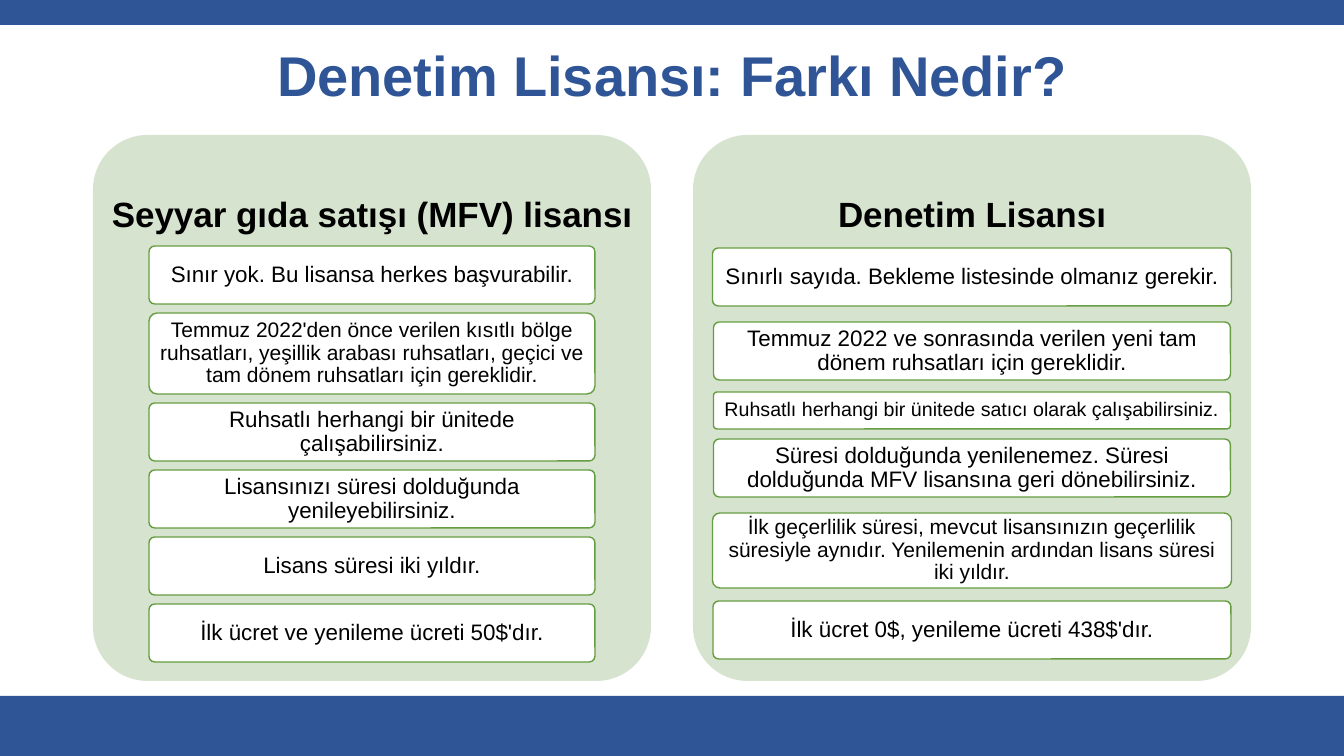
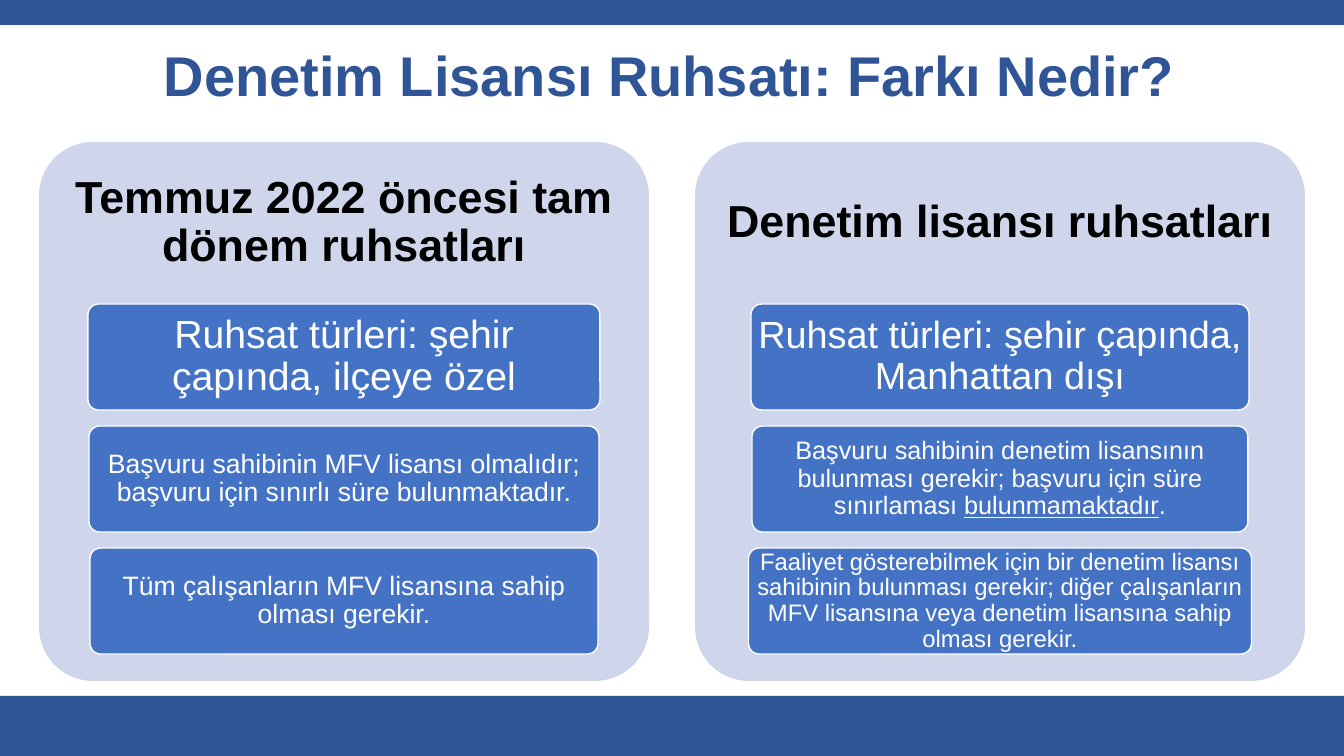
from collections import namedtuple

from pptx import Presentation
from pptx.dml.color import RGBColor
from pptx.enum.shapes import MSO_SHAPE
from pptx.enum.text import MSO_ANCHOR, PP_ALIGN
from pptx.util import Emu, Pt

WIDTH, HEIGHT = 1344, 756
SCALE = 12192000 / WIDTH
FONT = "Arial"
BLUE, BLACK, WHITE = "2F5597", "000000", "FFFFFF"
ROUND = 0.1
HEAD = 162

Box = namedtuple("Box", "x y w h")
Style = namedtuple("Style", "panel fill line ink head pad")
# gap is the space above the card
Card = namedtuple("Card", "text size width height gap")

GREEN = Style("D5E3CF", WHITE, "669D40", BLACK, 25, 6)
NAVY = Style("CFD5EA", "4472C4", WHITE, WHITE, 32, 4)


def px(n):
    return Emu(round(n * SCALE))


def rgb(code):
    return RGBColor.from_string(code)


def place(box):
    return [px(n) for n in box]


def write(shape, text, size, ink, bold=False, pad=10):
    """Set centred text; words between underscores are underlined."""
    frame = shape.text_frame
    frame.word_wrap = True
    frame.vertical_anchor = MSO_ANCHOR.MIDDLE
    frame.margin_left = frame.margin_right = px(pad)
    frame.margin_top = frame.margin_bottom = px(4)
    para = frame.paragraphs[0]
    para.alignment = PP_ALIGN.CENTER
    para.line_spacing = 0.9
    for i, part in enumerate(text.split("_")):
        run = para.add_run()
        run.text = part
        font = run.font
        font.name, font.size, font.bold = FONT, Pt(size), bold
        font.color.rgb = rgb(ink)
        if i % 2:
            font.underline = True


def block(slide, kind, box, fill, line=None):
    shape = slide.shapes.add_shape(kind, *place(box))
    shape.shadow.inherit = False
    shape.fill.solid()
    shape.fill.fore_color.rgb = rgb(fill)
    if line:
        shape.line.color.rgb = rgb(line)
        shape.line.width = Pt(1)
    else:
        shape.line.fill.background()
    if kind == MSO_SHAPE.ROUNDED_RECTANGLE:
        shape.adjustments[0] = ROUND
    return shape


def label(slide, box, *args, **opts):
    write(slide.shapes.add_textbox(*place(box)), *args, **opts)


def frame(deck, title, left, width):
    """Add a slide with its two bands and its title."""
    slide = deck.slides.add_slide(deck.slide_layouts[6])
    for top, tall in ((0, 25), (696, 60)):
        block(slide, MSO_SHAPE.RECTANGLE, Box(0, top, WIDTH, tall), BLUE)
    label(slide, Box(left, 40, width, 76), title, 40, BLUE, bold=True)
    return slide


def panel(slide, box, style, head, cards):
    """Draw a panel with a heading and a centred stack of cards."""
    kind = MSO_SHAPE.ROUNDED_RECTANGLE
    block(slide, kind, box, style.panel)
    label(slide, box._replace(h=HEAD), head, style.head, BLACK, bold=True)
    top = box.y
    for card in cards:
        top += card.gap
        left = box.x + (box.w - card.width) / 2
        spot = Box(left, top, card.width, card.height)
        shape = block(slide, kind, spot, style.fill, style.line)
        write(shape, card.text, card.size, style.ink, pad=style.pad)
        top += card.height


def compare(deck, title, span, style, boxes, columns):
    slide = frame(deck, title, *span)
    for box, (head, cards) in zip(boxes, columns):
        panel(slide, box, style, head, cards)


def pair(left, top, width, tall, gap):
    """Return two equal boxes side by side."""
    return [Box(left + i * (width + gap), top, width, tall) for i in range(2)]


MOBILE = [
    Card("Sınır yok. Bu lisansa herkes başvurabilir.", 16, 446, 58, 111),
    Card("Temmuz 2022'den önce verilen kısıtlı bölge ruhsatları, yeşillik "
         "arabası ruhsatları, geçici ve tam dönem ruhsatları için gereklidir.",
         15, 446, 81, 9),
    Card("Ruhsatlı herhangi bir ünitede çalışabilirsiniz.", 16, 446, 58, 9),
    Card("Lisansınızı süresi dolduğunda yenileyebilirsiniz.", 16, 446, 58, 9),
    Card("Lisans süresi iki yıldır.", 16, 446, 58, 9),
    Card("İlk ücret ve yenileme ücreti 50$'dır.", 16, 446, 58, 9),
]
AUDIT = [
    Card("Sınırlı sayıda. Bekleme listesinde olmanız gerekir.",
         16, 519, 58, 113),
    Card("Temmuz 2022 ve sonrasında verilen yeni tam dönem ruhsatları için "
         "gereklidir.", 16, 517, 58, 16),
    Card("Ruhsatlı herhangi bir ünitede satıcı olarak çalışabilirsiniz.",
         14, 517, 37, 12),
    Card("Süresi dolduğunda yenilenemez. Süresi dolduğunda MFV lisansına "
         "geri dönebilirsiniz.", 16, 517, 58, 10),
    Card("İlk geçerlilik süresi, mevcut lisansınızın geçerlilik süresiyle "
         "aynıdır. Yenilemenin ardından lisans süresi iki yıldır.",
         15, 519, 75, 16),
    Card("İlk ücret 0$, yenileme ücreti 438$'dır.", 16, 518, 58, 13),
]
BEFORE = [
    Card("Ruhsat türleri: şehir çapında, ilçeye özel", 28, 512, 106, 162),
    Card("Başvuru sahibinin MFV lisansı olmalıdır; başvuru için sınırlı süre "
         "bulunmaktadır.", 19, 510, 106, 16),
    Card("Tüm çalışanların MFV lisansına sahip olması gerekir.",
         19, 508, 106, 16),
]
PERMIT = [
    Card("Ruhsat türleri: şehir çapında, Manhattan dışı", 27, 498, 106, 162),
    Card("Başvuru sahibinin denetim lisansının bulunması gerekir; başvuru "
         "için süre sınırlaması _bulunmamaktadır_.", 18, 496, 106, 16),
    Card("Faaliyet gösterebilmek için bir denetim lisansı sahibinin bulunması "
         "gerekir; diğer çalışanların MFV lisansına veya denetim lisansına "
         "sahip olması gerekir.", 17, 503, 106, 16),
]


def main():
    deck = Presentation()
    deck.slide_width, deck.slide_height = px(WIDTH), px(HEIGHT)
    compare(deck, "Denetim Lisansı: Farkı Nedir?", (93, 1158), GREEN,
            pair(93, 135, 558, 546, 42),
            [("Seyyar gıda satışı (MFV) lisansı", MOBILE),
             ("Denetim Lisansı", AUDIT)])
    compare(deck, "Denetim Lisansı Ruhsatı: Farkı Nedir?", (0, 1338), NAVY,
            pair(39, 142, 610, 539, 46),
            [("Temmuz 2022 öncesi tam dönem ruhsatları", BEFORE),
             ("Denetim lisansı ruhsatları", PERMIT)])
    deck.save("out.pptx")


if __name__ == "__main__":
    main()
